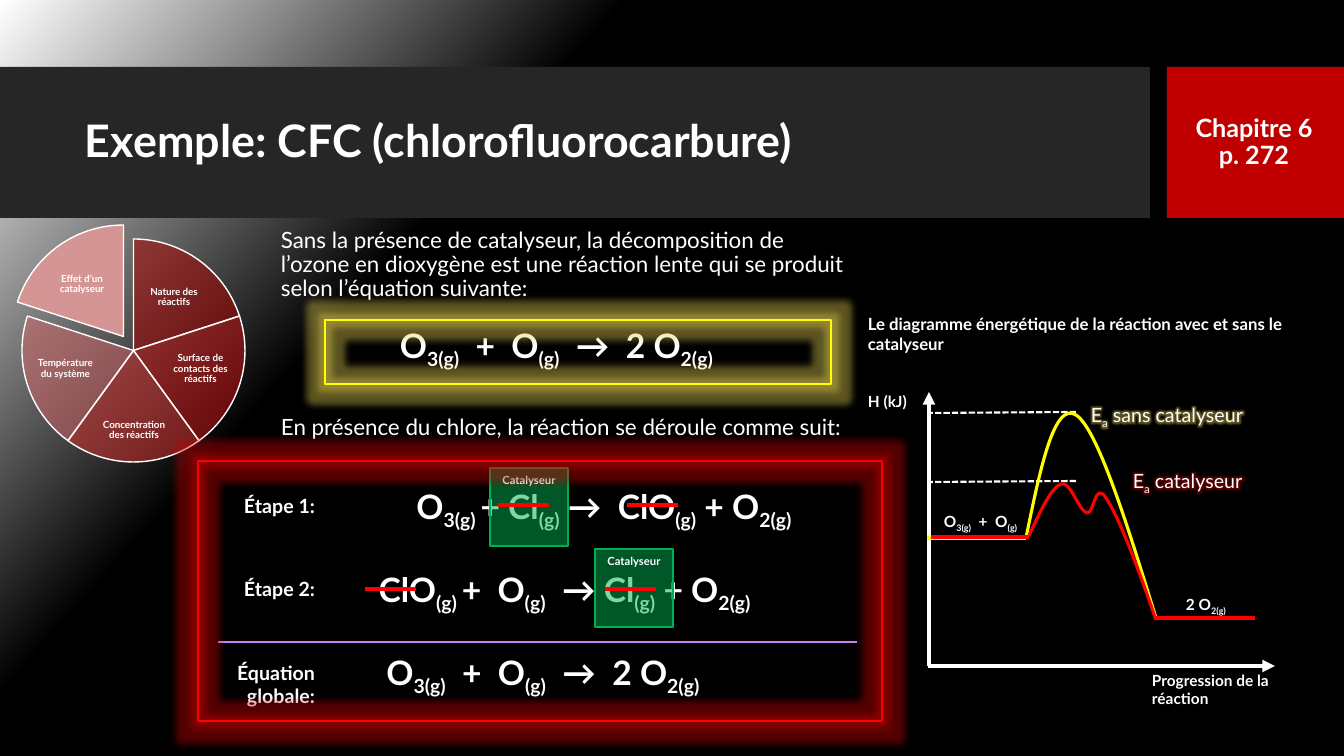
from lxml import etree
from pptx import Presentation
from pptx import util as u
from pptx.dml import color
from pptx.enum import dml, shapes, text
from pptx.oxml import ns

PX = 914400 / 100.8
COLORS = {
    "white": "FFFFFF", "black": "000000", "band": "262626", "badge": "C00000",
    "yellow": "FFFF00", "red": "FF0000", "green": "00B050", "violet": "D17DF9",
    "nature": "AE0000", "surface": "CE1010", "concentration": "DD3030",
    "temperature": "D66666", "catalyst": "D69595",
    "yellow glow": "E6D250", "red glow": "D00000",
}
OVERALL = "O|3(g)|  +  O|(g)|  →  2 O|2(g)"
LEFT, CENTER, RIGHT = text.PP_ALIGN.LEFT, text.PP_ALIGN.CENTER, text.PP_ALIGN.RIGHT
TOP, MIDDLE = text.MSO_ANCHOR.TOP, text.MSO_ANCHOR.MIDDLE


def px(value):
    """Turn pixels into EMU."""
    return u.Emu(round(value * PX))


def rgb(name):
    """Look up a named colour."""
    return color.RGBColor.from_string(COLORS[name])


def child(parent, tag, **attributes):
    """Append a DrawingML element."""
    return etree.SubElement(parent, ns.qn("a:" + tag), attributes)


def glow(effects, name, radius):
    """Add a translucent glow to an effect list."""
    halo = child(effects, "glow", rad=str(int(px(radius))))
    tint = child(halo, "srgbClr", val=COLORS[name + " glow"])
    child(tint, "alpha", val="40000")


def write(frame, content, size, bold=True, align=LEFT, anchor=TOP, spacing=1.0,
          inset=None, halo=None):
    """Fill a text frame; every second part between bars is a subscript."""
    settings = {"word_wrap": True, "vertical_anchor": anchor}
    if inset is not None:
        sides = ("left", "top", "right", "bottom")
        settings.update({f"margin_{side}": px(inset) for side in sides})
    for key, value in settings.items():
        setattr(frame, key, value)
    for index, line in enumerate(content.split("\n")):
        paragraph = frame.add_paragraph() if index else frame.paragraphs[0]
        paragraph.alignment, paragraph.line_spacing = align, spacing
        for position, part in enumerate(line.split("|")):
            run = paragraph.add_run()
            run.text = part
            for key, value in {"name": "Lato", "size": u.Pt(size), "bold": bold}.items():
                setattr(run.font, key, value)
            run.font.color.rgb = rgb("white")
            properties = run.font._element
            if position % 2:
                properties.set("baseline", "-25000")
            if halo:
                effects = etree.Element(ns.qn("a:effectLst"))
                glow(effects, halo, 12)
                properties.find(ns.qn("a:solidFill")).addnext(effects)


def label(slide, box, content, size, **style):
    """Place a text box."""
    write(slide.shapes.add_textbox(*map(px, box)).text_frame, content, size, **style)


def paint(shape, fill=None, outline=None, width=1.0, alpha=None):
    """Set fill, outline and opacity of a shape."""
    shape.shadow.inherit = False
    if fill:
        shape.fill.solid()
        shape.fill.fore_color.rgb = rgb(fill)
        if alpha:
            tint = shape._element.spPr.find(ns.qn("a:solidFill"))[0]
            child(tint, "alpha", val=str(alpha * 1000))
    else:
        shape.fill.background()
    if outline:
        shape.line.color.rgb = rgb(outline)
        shape.line.width = u.Pt(width)
    else:
        shape.line.fill.background()
    return shape


def rectangle(slide, box, **style):
    """Place a painted rectangle."""
    return paint(slide.shapes.add_shape(shapes.MSO_SHAPE.RECTANGLE, *map(px, box)), **style)


def glowing_frame(slide, box, name):
    """Draw an empty frame with a wide glow."""
    frame = rectangle(slide, box, outline=name)
    glow(frame._element.spPr.find(ns.qn("a:effectLst")), name, 14)


def line(slide, ends, name, width, dashed=False, arrow=False):
    """Draw a straight line."""
    connector = slide.shapes.add_connector(shapes.MSO_CONNECTOR.STRAIGHT, *map(px, ends))
    connector.line.color.rgb = rgb(name)
    connector.line.width = u.Pt(width)
    if dashed:
        connector.line.dash_style = dml.MSO_LINE.SQUARE_DOT
    if arrow:
        child(connector.line._get_or_add_ln(), "tailEnd", type="triangle")
    child(connector._element.spPr, "effectLst")


def curve(slide, left, top, points, name):
    """Draw a chain of cubic bends through a start and three points per bend."""
    start, *controls = [(px(left + x), px(top + y)) for x, y in points]
    builder = slide.shapes.build_freeform(*start)
    builder.add_line_segments(controls, close=False)
    profile = paint(builder.convert_to_shape(), outline=name, width=2.25)
    segments = list(profile._element.iter(ns.qn("a:lnTo")))
    outline = segments[0].getparent()
    for first in range(0, len(segments), 3):
        bend = child(outline, "cubicBezTo")
        for segment in segments[first:first + 3]:
            bend.append(segment[0])
            outline.remove(segment)


def header(slide, left, top, height):
    """Draw the title band and the chapter badge."""
    rectangle(slide, (left, top, 1150, height), fill="band")
    rectangle(slide, (left + 1167, top, 177, height), fill="badge")
    label(slide, (left + 75, top + 16, 1059, 119), "Exemple: CFC (chlorofluorocarbure)",
          32, anchor=MIDDLE, spacing=0.9)
    label(slide, (left + 1165, top, 178, height), "Chapitre 6\np. 272",
          18, align=CENTER, anchor=MIDDLE, spacing=0.9)


def factor_wheel(slide, left, top, diameter):
    """Draw the five factors as a wheel with the last slice pulled out."""
    factors = [
        ("nature", "Nature des réactifs", (114, 33, 76, 51)),
        ("surface", "Surface de contacts des réactifs", (145, 102, 67, 56)),
        ("concentration", "Concentration des réactifs", (72, 168, 80, 47)),
        ("temperature", "Température du système", (10, 102, 67, 56)),
        ("catalyst", "Effet d’un catalyseur", (22, 20, 76, 51)),
    ]
    for index, (name, caption, (x, y, width, height)) in enumerate(factors):
        pulled = name == "catalyst"
        place = (left - 10 * pulled, top - 14 * pulled, diameter, diameter)
        piece = slide.shapes.add_shape(shapes.MSO_SHAPE.PIE, *map(px, place))
        for edge in (0, 1):
            degrees = (270 + 72 * (index + edge)) % 360
            piece.adjustments[edge] = degrees * 0.6
        paint(piece, fill=name, outline="white", alpha=None if pulled else 50)
        label(slide, (left + x, top + y, width, height), caption, 7, align=CENTER,
              anchor=MIDDLE, spacing=0.9, inset=1)


def slow_reaction(slide, left, top, width):
    """Present the reaction without catalyst."""
    label(slide, (left, top, width, 94),
          "Sans la présence de catalyseur, la décomposition de l’ozone en dioxygène "
          "est une réaction lente qui se produit selon l’équation suivante:",
          16, bold=False, anchor=MIDDLE, spacing=0.9)
    label(slide, (left, top + 102, 571, 50), OVERALL, 24, align=CENTER)
    label(slide, (left, top + 184, width, 54),
          "En présence du chlore, la réaction se déroule comme suit:",
          16, bold=False, anchor=MIDDLE, spacing=0.8)
    glowing_frame(slide, (left + 54, top + 102, 506, 64), "yellow")


def mechanism(slide, left, top, width, height):
    """Show both steps with struck species and the overall equation."""
    steps = [
        ("Étape 1:", 20, 50, 164, 484, "O|3(g) |+ Cl|(g)| →  ClO|(g)| + O|2(g)"),
        ("Étape 2:", 103, 50, 90, 558, "ClO|(g) |+  O|(g)|  → Cl|(g)| + O|2(g) "),
        ("Équation globale:", 193, 60, 47, 596, OVERALL),
    ]
    for index, (name, y, tall, x, wide, equation) in enumerate(steps):
        label(slide, (left + x, top + 20 + 83 * index, wide, 50), equation, 24, align=CENTER)
        label(slide, (left + 19, top + y, 108, tall), name, 14, align=RIGHT, anchor=MIDDLE)
    line(slide, (left + 20, top + 181, left + 659, top + 181), "violet", 1.5)
    for x, y in ((292, 7), (397, 88)):
        marker = rectangle(slide, (left + x, top + y, 78, 78), fill="green",
                           outline="green", alpha=50)
        write(marker.text_frame, "Catalyseur", 8, align=CENTER)
    for x, y in ((300, 44), (429, 44), (167, 128), (407, 128)):
        line(slide, (left + x, top + y, left + x + 51, top + y), "red", 2.25)
    glowing_frame(slide, (left, top, width, height), "red")


def energy_diagram(slide, left, top, width):
    """Draw the energy profiles with and without catalyst."""
    for y in (172, 103):
        line(slide, (left + 218, top + y, left + 71, top + y + 1), "white", 1.5, dashed=True)
    for x1, y1, x2, y2 in ((71, 357, 71, 83), (70, 357, 417, 357)):
        line(slide, (left + x1, top + y1, left + x2, top + y2), "white", 3, arrow=True)
    captions = [
        ((0, 0, width, 50), "Le diagramme énergétique de la réaction avec et sans le catalyseur",
         12, {}),
        ((0, 78, 79, 29), "H (kJ)", 11, {}),
        ((284, 357, 168, 47), "Progression de la réaction", 11, {}),
        ((68, 198, 109, 29), "O|3(g)|  +  O|(g)", 11, {"align": CENTER}),
        ((297, 281, 102, 29), "2 O|2(g)", 11, {"align": CENTER}),
        ((223, 89, 246, 34), "E|a| sans catalyseur", 14, {"bold": False, "halo": "yellow"}),
        ((265, 155, 217, 34), "E|a| catalyseur", 14, {"bold": False, "halo": "red"}),
    ]
    for (x, y, wide, tall), content, size, style in captions:
        label(slide, (left + x, top + y, wide, tall), content, size, **style)
    profiles = [
        ("yellow", (69, 168, 229),
         [(168, 229), (182, 161), (196, 92), (218, 106), (239, 119), (269, 214), (298, 309)]),
        ("red", (73, 171, 228),
         [(171, 227), (182, 203), (193, 179), (203, 175), (212, 171), (221, 202), (229, 204),
          (236, 206), (237, 171), (248, 189), (260, 206), (280, 258), (298, 311)]),
    ]
    for name, reactants, points in profiles:
        for x1, x2, y in ((297, 397, 309), reactants):
            line(slide, (left + x1, top + y, left + x2, top + y), name, 2.25)
        curve(slide, left, top, points, name)


def main():
    """Build and save the slide."""
    deck = Presentation()
    deck.slide_width, deck.slide_height = px(1344), px(756)
    slide = deck.slides.add_slide(deck.slide_layouts[6])
    backdrop = slide.background.fill
    backdrop.gradient()
    backdrop.gradient_angle = 318
    for stop, name, position in zip(backdrop.gradient_stops, ("white", "black"), (0, 0.31)):
        stop.color.rgb, stop.position = rgb(name), position
    header(slide, 0, 67, 151)
    factor_wheel(slide, 22, 239, 223)
    slow_reaction(slide, 271, 218, 585)
    energy_diagram(slide, 858, 309, 486)
    mechanism(slide, 198, 461, 684, 260)
    deck.save("out.pptx")


if __name__ == "__main__":
    main()
